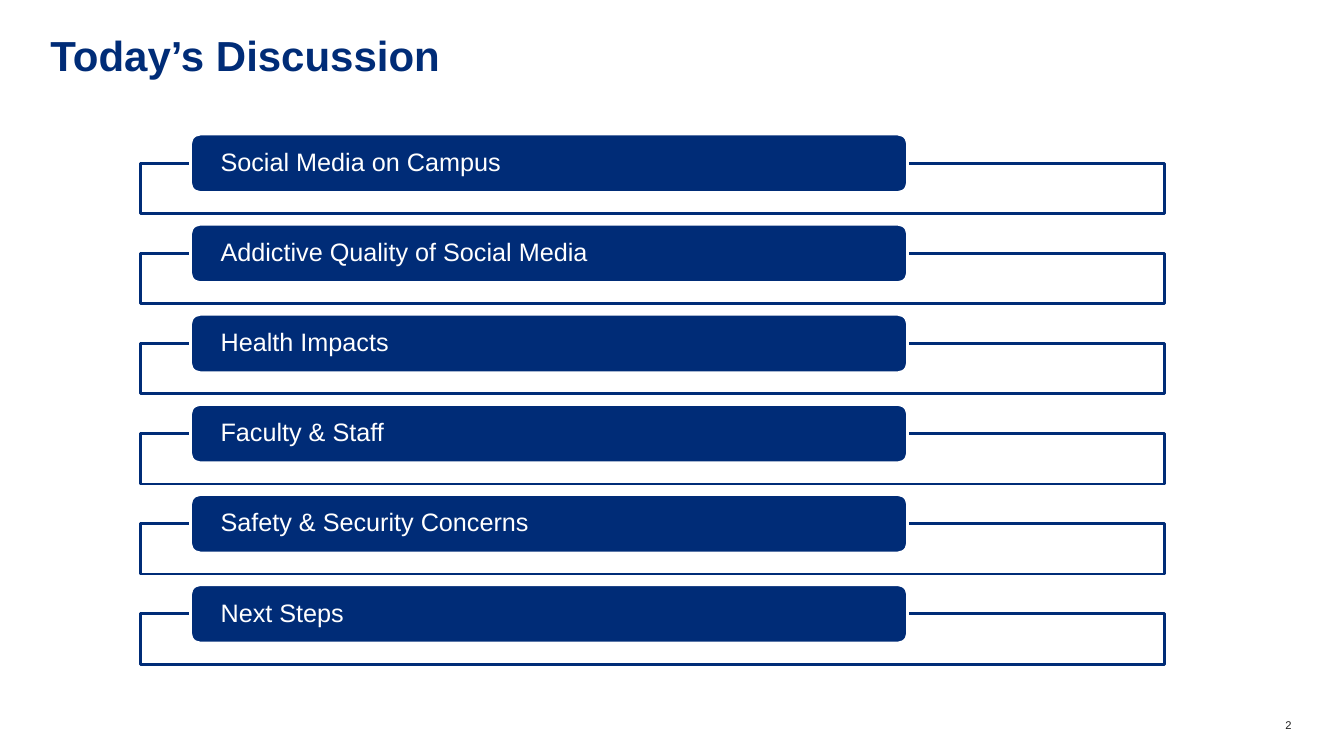
from lxml.etree import SubElement
from pptx import Presentation
from pptx.dml.color import RGBColor
from pptx.enum.shapes import MSO_SHAPE
from pptx.enum.text import MSO_ANCHOR, PP_ALIGN
from pptx.oxml.ns import qn
from pptx.util import Inches, Pt

COLORS = {"navy": "002C77", "white": "FFFFFF", "ink": "202020"}
FONT = "Arial"
SLIDE_W, SLIDE_H = 13.33, 7.5
TOPICS = [
    "Social Media on Campus",
    "Addictive Quality of Social Media",
    "Health Impacts",
    "Faculty & Staff",
    "Safety & Security Concerns",
    "Next Steps",
]


def color(name):
    return RGBColor.from_string(COLORS[name])


def write(shape, text, size, ink, bold=False, align=PP_ALIGN.LEFT,
          anchor=MSO_ANCHOR.TOP, spacing=1.0, inset=0):
    frame = shape.text_frame
    frame.word_wrap = True
    frame.vertical_anchor = anchor
    frame.margin_left = frame.margin_right = Inches(inset)
    frame.margin_top = frame.margin_bottom = 0
    paragraph = frame.paragraphs[0]
    paragraph.alignment = align
    paragraph.line_spacing = spacing
    run = paragraph.add_run()
    run.text = text
    run.font.name = FONT
    run.font.size = Pt(size)
    run.font.bold = bold
    run.font.color.rgb = color(ink)


def add_panel(slide, preset, box, fill, line):
    panel = slide.shapes.add_shape(preset, *map(Inches, box))
    panel.shadow.inherit = False
    panel.fill.solid()
    panel.fill.fore_color.rgb = color(fill)
    panel.line.color.rgb = color(line)
    panel.line.width = Pt(2)
    return panel


def add_title(slide, box, text):
    title = slide.shapes.add_textbox(*map(Inches, box))
    write(title, text, 30, "navy", bold=True, spacing=0.8)


def add_agenda(slide, box, topics):
    left, top, width, height = box
    frame_h, label_h, label_rise = 0.5, 0.58, 0.29
    pitch = (height - label_rise - frame_h) / (len(topics) - 1)
    for row, topic in enumerate(topics):
        label_top = top + row * pitch
        # Outlined frame behind the label
        frame = add_panel(slide, MSO_SHAPE.RECTANGLE,
                          (left, label_top + label_rise, width, frame_h),
                          "white", "navy")
        frame_color = frame.fill._xPr.find(qn("a:solidFill"))[0]
        SubElement(frame_color, qn("a:alpha"), val="90000")
        # Rounded label, 70% of the frame's width
        label = add_panel(slide, MSO_SHAPE.ROUNDED_RECTANGLE,
                          (left + 0.5, label_top, width * 0.7, label_h),
                          "navy", "white")
        write(label, topic, 18, "white", anchor=MSO_ANCHOR.MIDDLE,
              spacing=0.9, inset=0.27)


def add_page_number(slide, box, number):
    page = slide.shapes.add_textbox(*map(Inches, box))
    write(page, str(number), 8, "ink", align=PP_ALIGN.RIGHT)


def main():
    deck = Presentation()
    deck.slide_width, deck.slide_height = Inches(SLIDE_W), Inches(SLIDE_H)
    slide = deck.slides.add_slide(deck.slide_layouts[6])
    add_page_number(slide, (12.5, 7.13, 0.31, 0.13), 2)
    add_title(slide, (0.5, 0.39, 12.31, 0.54), "Today’s Discussion")
    add_agenda(slide, (1.39, 1.33, 10.16, 5.26), TOPICS)
    deck.save("out.pptx")


if __name__ == "__main__":
    main()
